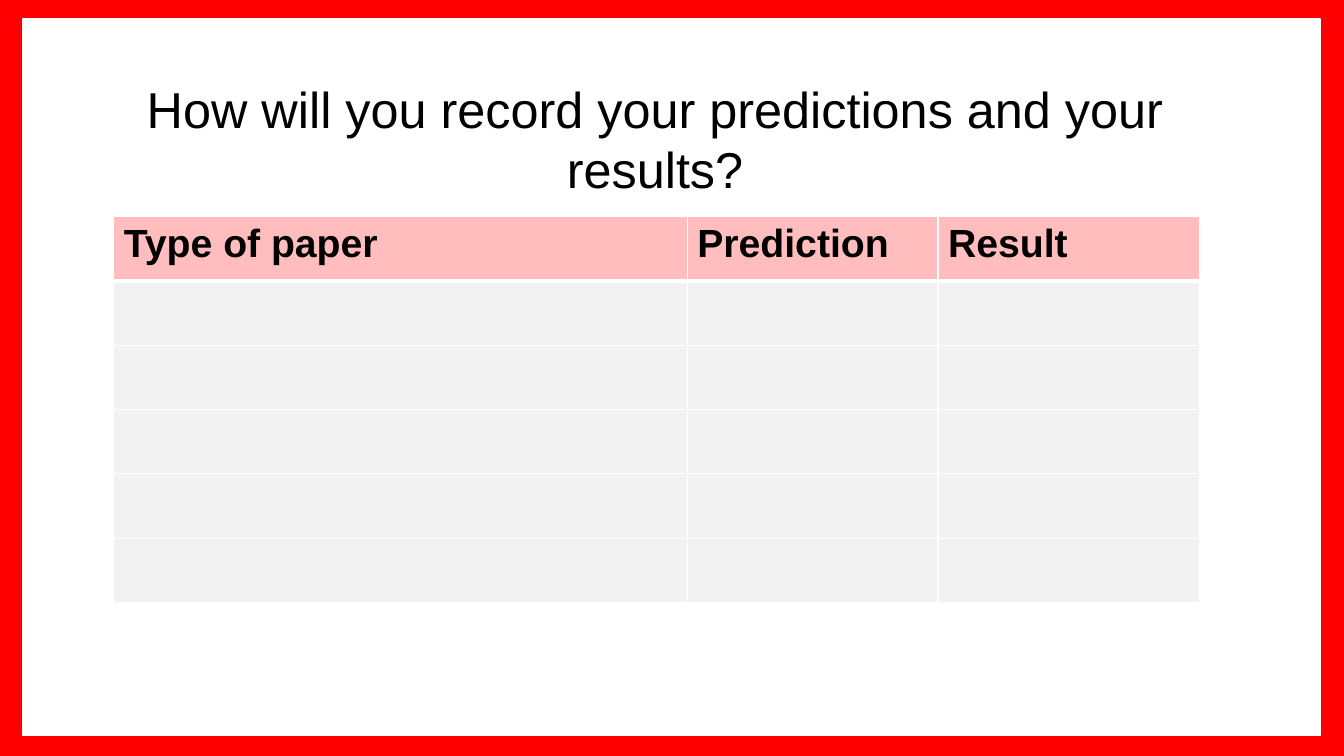
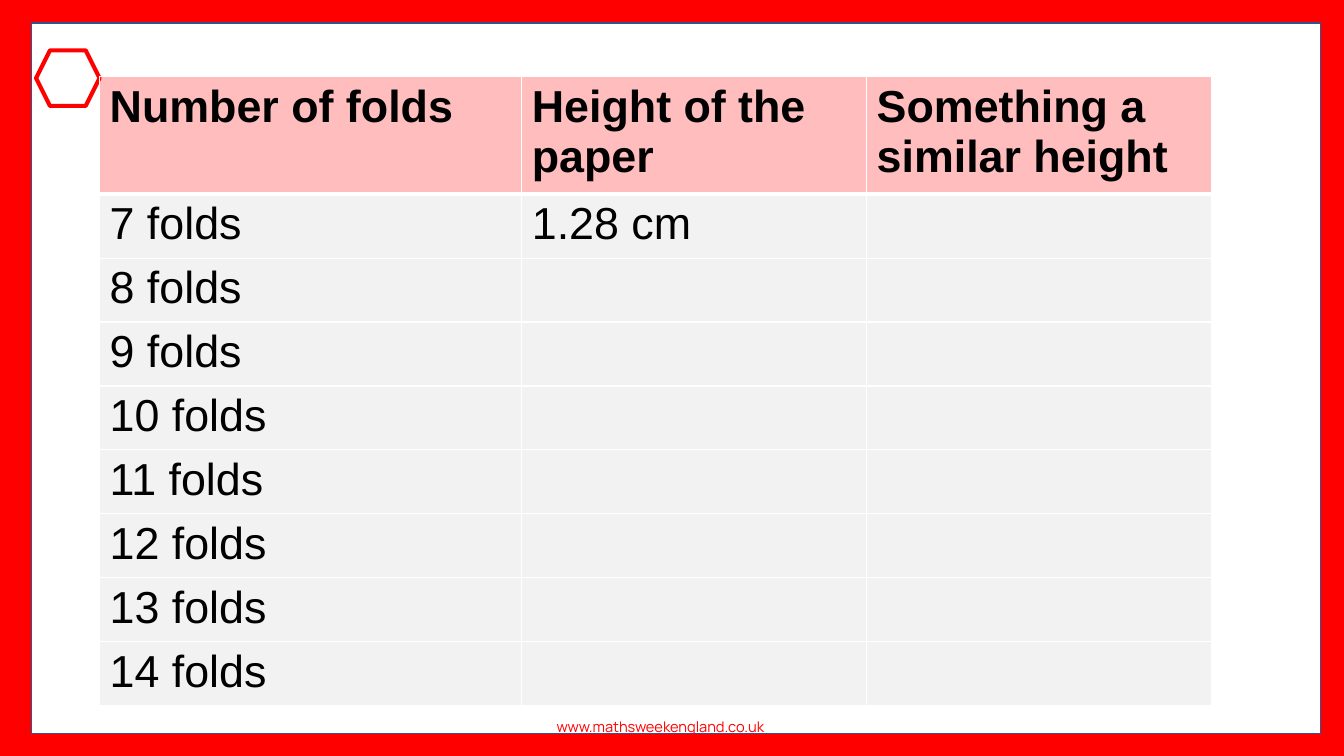
from lxml import etree
from pptx import Presentation
from pptx.dml.color import RGBColor
from pptx.enum.shapes import MSO_SHAPE
from pptx.enum.text import MSO_ANCHOR, MSO_AUTO_SIZE, PP_ALIGN
from pptx.oxml.ns import qn
from pptx.util import Cm, Pt

RED = RGBColor(0xFF, 0x00, 0x00)
WHITE = RGBColor(0xFF, 0xFF, 0xFF)
BLACK = RGBColor(0x00, 0x00, 0x00)
GREY = RGBColor(0xF2, 0xF2, 0xF2)
BLUE = RGBColor(0x32, 0x54, 0x91)

RECTANGLE, HEXAGON = MSO_SHAPE.RECTANGLE, MSO_SHAPE.HEXAGON
CENTER = PP_ALIGN.CENTER
TOP = MSO_ANCHOR.TOP
NO_AUTOSIZE = MSO_AUTO_SIZE.NONE

BODY_FONT, FOOTER_FONT = "Arial", "Manrope"
TITLE_ONLY, BLANK = 5, 6
HEADER_ALPHA = 26  # percent


class Deck:
    """Holds the shared style and the slide being built."""

    def __init__(self):
        self.prs = Presentation()
        self.prs.slide_width, self.prs.slide_height = Cm(33.87), Cm(19.05)
        background = self.prs.slide_master.background.fill
        background.solid()
        background.fore_color.rgb = RED
        self.slide = None

    def new_slide(self, layout):
        self.slide = self.prs.slides.add_slide(self.prs.slide_layouts[layout])

    def shape(self, kind, box, line, width, fill=None):
        shape = self.slide.shapes.add_shape(kind, *map(Cm, box))
        shape.shadow.inherit = False
        if fill is None:
            shape.fill.background()
        else:
            shape.fill.solid()
            shape.fill.fore_color.rgb = fill
        shape.line.color.rgb = line
        shape.line.width = Pt(width)

    def panel(self, box, line):
        self.shape(RECTANGLE, box, line, 1, WHITE)

    def run(self, paragraph, text, size, font=BODY_FONT, color=BLACK, bold=False):
        run = paragraph.add_run()
        run.text = text
        run.font.name, run.font.size, run.font.bold = font, Pt(size), bold
        run.font.color.rgb = color

    def title(self, text, box):
        title = self.slide.shapes.title
        title.left, title.top, title.width, title.height = map(Cm, box)
        frame = title.text_frame
        frame.word_wrap = True
        frame.auto_size = NO_AUTOSIZE
        frame.vertical_anchor = TOP
        paragraph = frame.paragraphs[0]
        paragraph.alignment = CENTER
        self.run(paragraph, text, 36)

    def footer(self, text):
        box = self.slide.shapes.add_textbox(Cm(10.64), Cm(17.86), Cm(12.01), Cm(0.61))
        frame = box.text_frame
        frame.word_wrap = True
        frame.margin_left = frame.margin_right = 0
        frame.margin_top = frame.margin_bottom = 0
        paragraph = frame.paragraphs[0]
        paragraph.alignment = CENTER
        paragraph.line_spacing = 1.5
        self.run(paragraph, text, 10.5, FOOTER_FONT, RED)

    def borders(self, cell, **widths):
        """Draw white borders; keys are the sides L, R, T, B."""
        properties = cell._tc.get_or_add_tcPr()
        for side, width in widths.items():
            line = etree.SubElement(properties, qn("a:ln" + side), w=str(Pt(width)))
            fill = etree.SubElement(line, qn("a:solidFill"))
            etree.SubElement(fill, qn("a:srgbClr"), val=str(WHITE))

    def table(self, rows, left, top, columns, header_height, row_height, size):
        heights = [header_height] + [row_height] * (len(rows) - 1)
        table = self.slide.shapes.add_table(
            len(rows), len(columns), Cm(left), Cm(top), Cm(sum(columns)), Cm(sum(heights))
        ).table
        table.first_row = True
        table.horz_banding = False
        for column, width in zip(table.columns, columns):
            column.width = Cm(width)
        for r, (texts, height) in enumerate(zip(rows, heights)):
            table.rows[r].height = Cm(height)
            is_header = r == 0
            for c, text in enumerate(texts):
                cell = table.cell(r, c)
                self.borders(cell, L=1, R=1, T=3 if r == 1 else 1, B=3 if is_header else 1)
                cell.fill.solid()
                cell.fill.fore_color.rgb = RED if is_header else GREY
                if is_header:
                    color = cell._tc.tcPr.find(qn("a:solidFill"))[0]
                    etree.SubElement(color, qn("a:alpha"), val=str(HEADER_ALPHA * 1000))
                if text:
                    self.run(cell.text_frame.paragraphs[0], text, size, bold=is_header)


def main():
    deck = Deck()

    # Predictions and results
    deck.new_slide(TITLE_ONLY)
    deck.panel((0.58, 0.48, 32.69, 18.06), WHITE)
    deck.title("How will you record your predictions and your results?",
               (1.12, 1.83, 30.78, 3.3))
    # The title goes in front of the panel
    title = deck.slide.shapes.title._element
    title.getparent().append(title)
    predictions = [("Type of paper", "Prediction", "Result")] + [("", "", "")] * 5
    deck.table(predictions, 2.87, 5.46, (14.45, 6.32, 6.6), 1.62, 1.62, 28)

    # Heights of the folded paper
    deck.new_slide(BLANK)
    deck.panel((0.79, 0.58, 32.49, 17.91), BLUE)
    deck.footer("www.mathsweekengland.co.uk")
    deck.shape(HEXAGON, (0.91, 1.27, 1.6, 1.4), RED, 3)
    heights = {7: "1.28 cm"}
    folds = [("Number of folds", "Height of the paper", "Something a similar height")]
    folds += [(f"{n} folds", heights.get(n, ""), "") for n in range(7, 15)]
    deck.table(folds, 2.51, 1.93, (10.64, 8.69, 8.69), 2.95, 1.61, 32)

    deck.prs.save("out.pptx")


if __name__ == "__main__":
    main()
